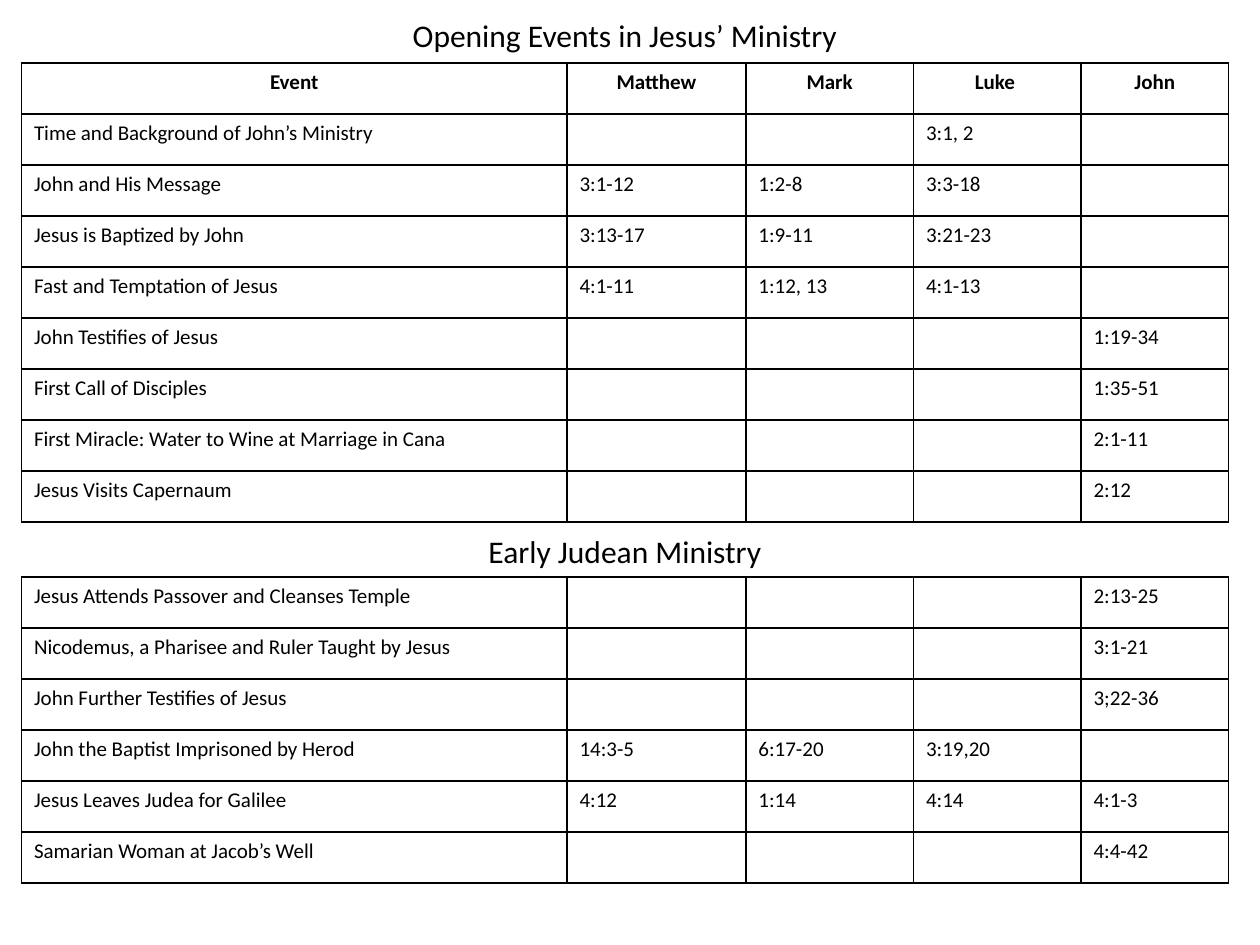
from lxml.etree import SubElement
from pptx import Presentation
from pptx.dml.color import RGBColor as RGB
from pptx.enum.text import MSO_ANCHOR as ANCHOR, MSO_AUTO_SIZE as AUTO, PP_ALIGN as ALIGN
from pptx.oxml.ns import qn
from pptx.util import Inches, Pt

WIDE, HIGH = 10, 7.5
LEFT, SPAN = 0.17, 9.58
COLS = [4.33, 1.42, 1.33, 1.33, 1.17]
ROW = 0.405
HEAD = 0.4
INK = "000000"

HEADS = ["Event", "Matthew", "Mark", "Luke ", "John"]
OPENING = [
    ["Time and Background of John’s Ministry", "", "", "3:1, 2", ""],
    ["John and His Message", "3:1-12", "1:2-8", "3:3-18", ""],
    ["Jesus is Baptized by John", "3:13-17", "1:9-11", "3:21-23", ""],
    ["Fast and Temptation of Jesus", "4:1-11", "1:12, 13", "4:1-13", ""],
    ["John Testifies of Jesus", "", "", "", "1:19-34"],
    ["First Call of Disciples", "", "", "", "1:35-51"],
    ["First Miracle: Water to Wine at Marriage in Cana", "", "", "", "2:1-11"],
    ["Jesus Visits Capernaum", "", "", "", "2:12"],
]
JUDEAN = [
    ["Jesus Attends Passover and Cleanses Temple", "", "", "", "2:13-25"],
    ["Nicodemus, a Pharisee and Ruler Taught by Jesus", "", "", "", "3:1-21"],
    ["John Further Testifies of Jesus", "", "", "", "3;22-36"],
    ["John the Baptist Imprisoned by Herod", "14:3-5", "6:17-20", "3:19,20", ""],
    ["Jesus Leaves Judea for Galilee", "4:12", "1:14", "4:14", "4:1-3"],
    ["Samarian Woman at Jacob’s Well", "", "", "", "4:4-42"],
]


def color(code):
    return RGB.from_string(code)


def write(frame, text, size=12, bold=False, align=ALIGN.LEFT):
    para = frame.paragraphs[0]
    para.alignment = align
    run = para.add_run()
    run.text = text
    font = run.font
    font.name, font.size, font.bold = "Calibri", Pt(size), bold
    font.color.rgb = color(INK)


def heading(shape, text, top):
    shape.left, shape.top = Inches(LEFT), Inches(top)
    shape.width, shape.height = Inches(SPAN), Inches(HEAD)
    frame = shape.text_frame
    frame.word_wrap = True
    frame.auto_size = AUTO.SHAPE_TO_FIT_TEXT
    frame.vertical_anchor = ANCHOR.TOP
    write(frame, text, size=18, align=ALIGN.CENTER)


def border(cell, width=1):
    props = cell._tc.get_or_add_tcPr()
    for side in ("lnL", "lnR", "lnT", "lnB"):
        line = SubElement(props, qn(f"a:{side}"), w=str(Pt(width)))
        fill = SubElement(line, qn("a:solidFill"))
        SubElement(fill, qn("a:srgbClr"), val=INK)


def grid(slide, rows, top, header=False):
    frame = slide.shapes.add_table(
        len(rows), len(COLS), Inches(LEFT), Inches(top),
        Inches(SPAN), Inches(ROW * len(rows)))
    table = frame.table
    table.first_row = header
    table.horz_banding = False
    for col, width in zip(table.columns, COLS):
        col.width = Inches(width)
    for r, row in enumerate(rows):
        table.rows[r].height = Inches(ROW)
        top_row = header and r == 0
        for c, text in enumerate(row):
            cell = table.cell(r, c)
            border(cell)
            cell.fill.background()
            if text:
                write(cell.text_frame, text, bold=top_row,
                      align=ALIGN.CENTER if top_row else ALIGN.LEFT)


def main():
    deck = Presentation()
    deck.slide_width, deck.slide_height = Inches(WIDE), Inches(HIGH)
    slide = deck.slides.add_slide(deck.slide_layouts[5])
    heading(slide.shapes.title, "Opening Events in Jesus’ Ministry", 0.08)
    grid(slide, [HEADS] + OPENING, 0.5, header=True)
    label = slide.shapes.add_textbox(0, 0, 0, 0)
    heading(label, "Early Judean Ministry", 4.17)
    grid(slide, JUDEAN, 4.58)
    deck.save("out.pptx")


if __name__ == "__main__":
    main()
